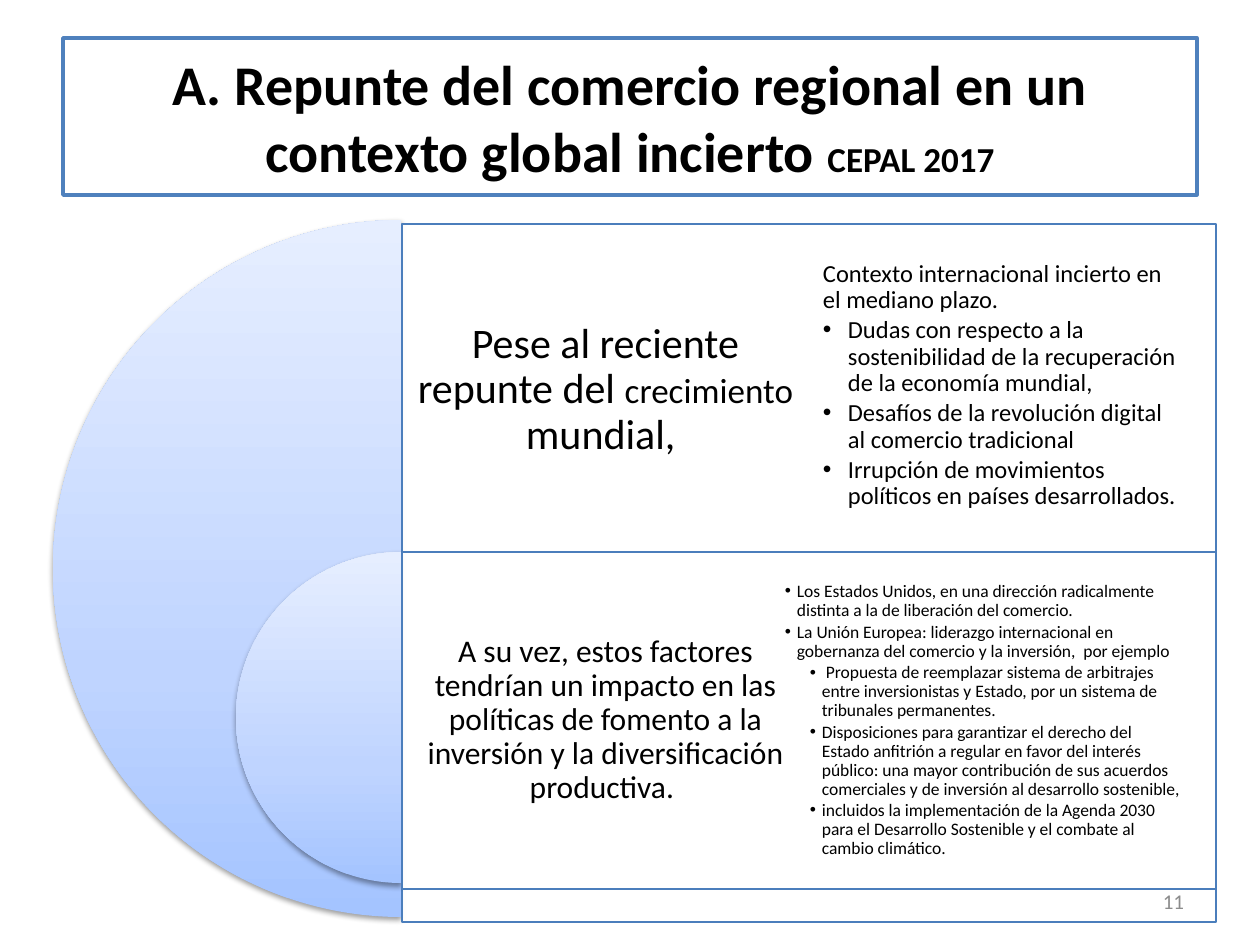
"""Build the slide on the upturn of regional trade in an uncertain global context."""
import copy

import pptx
import pptx.dml.color
import pptx.enum.shapes
import pptx.enum.text
import pptx.oxml
import pptx.oxml.ns
import pptx.util

SHAPE = pptx.enum.shapes.MSO_SHAPE
ALIGN = pptx.enum.text.PP_ALIGN
PX = 914400 / 126
BLACK = "000000"
DISC_STOPS = [(0, "A4C4FF"), (0.35, "BFD4FF"), (1, "E6EEFF")]

TITLE = [("A. Repunte del comercio regional en un contexto global incierto ", 32), ("CEPAL 2017", 20)]
PAGE_NUMBER = "11"

SECTIONS = [
    {"disc": (53, 220, 697, 697), "panel": (402, 224, 814, 698), "panel_insets": (13, 13, 420, 379),
     "heading": [("Pese al reciente repunte del ", 24), ("crecimiento", 20), (" mundial, ", 24)],
     "detail": (789, 220, 427, 331), "size": 14, "hanging": 25,
     "points": [
         (None, "Contexto internacional incierto en el mediano plazo."),
         (25, "Dudas con respecto a la sostenibilidad de la recuperación de la economía mundial,"),
         (25, "Desafíos de la revolución digital al comercio tradicional"),
         (25, "Irrupción de movimientos políticos en países desarrollados."),
     ]},
    {"disc": (236, 552, 331, 331), "panel": (402, 552, 814, 337), "panel_insets": (10, 10, 417, 10),
     "heading": [("A su vez, estos factores tendrían un impacto en las políticas de fomento "
                  "a la inversión y la diversificación productiva. ", 18)],
     "detail": (751, 544, 465, 353), "size": 10, "hanging": 12,
     "points": [
         (12, "Los Estados Unidos, en una dirección radicalmente distinta a la de liberación del comercio."),
         (12, "La Unión Europea: liderazgo internacional en gobernanza del comercio y la inversión,  por ejemplo"),
         (37, " Propuesta de reemplazar sistema de arbitrajes entre inversionistas y Estado, "
              "por un sistema de tribunales permanentes."),
         (37, "Disposiciones para garantizar el derecho del Estado anfitrión a regular en favor del "
              "interés público: una mayor contribución de sus acuerdos comerciales y de inversión "
              "al desarrollo sostenible,"),
         (37, "incluidos la implementación de la Agenda 2030 para el Desarrollo Sostenible "
              "y el combate al cambio climático."),
     ]},
]


def px(value):
    return round(value * PX)


def rgb(value):
    return pptx.dml.color.RGBColor.from_string(value)


def add_xml(parent, tag, **attributes):
    child = pptx.oxml.parse_xml(f'<a:{tag} {pptx.oxml.ns.nsdecls("a")}/>')
    for key, value in attributes.items():
        child.set(key, str(value))
    parent.append(child)
    return child


def prepare_frame(owner, insets):
    frame = owner.text_frame
    frame.word_wrap = True
    frame.vertical_anchor = pptx.enum.text.MSO_ANCHOR.MIDDLE
    frame.margin_left, frame.margin_top, frame.margin_right, frame.margin_bottom = map(px, insets)
    return frame


def write_runs(paragraph, runs, align, color=BLACK, bold=False):
    paragraph.alignment = align
    for text, size in runs:
        run = paragraph.add_run()
        run.text = text
        run.font.name = "Calibri"
        run.font.size = pptx.util.Pt(size)
        run.font.bold = bold
        run.font.color.rgb = rgb(color)


def set_spacing(paragraph, size, share):
    paragraph.line_spacing = 0.9
    paragraph.space_after = pptx.util.Pt(round(size * share, 1))


def add_box(slide, place, line_color, line_width, insets):
    box = slide.shapes.add_shape(SHAPE.RECTANGLE, *map(px, place))
    box.shadow.inherit = False
    box.fill.solid()
    box.fill.fore_color.rgb = rgb("FFFFFF")
    box.line.color.rgb = rgb(line_color)
    box.line.width = pptx.util.Pt(line_width)
    return box, prepare_frame(box, insets)


def add_disc(slide, place):
    disc = slide.shapes.add_shape(SHAPE.PIE, *map(px, place))
    disc.adjustments[0], disc.adjustments[1] = 54, 162
    disc.line.fill.background()
    disc.fill.gradient()
    disc.fill.gradient_angle = 90
    properties = disc._element.spPr
    stops = properties.find(".//" + pptx.oxml.ns.qn("a:gsLst"))
    stops.insert(1, copy.deepcopy(stops[0]))
    for stop, (position, color) in zip(disc.fill.gradient_stops, DISC_STOPS):
        stop.position = position
        stop.color.rgb = rgb(color)
    disc.shadow.inherit = False
    effects = properties.find(pptx.oxml.ns.qn("a:effectLst"))
    shadow = add_xml(effects, "outerShdw", blurRad=pptx.util.Pt(3.1), dist=pptx.util.Pt(1.6),
                     dir=5400000, rotWithShape=0)
    add_xml(add_xml(shadow, "srgbClr", val=BLACK), "alpha", val=38000)


def add_panel(slide, section):
    panel, frame = add_box(slide, section["panel"], "4B7EBC", 0.75, section["panel_insets"])
    white = panel._element.spPr.find(pptx.oxml.ns.qn("a:solidFill"))[0]
    add_xml(white, "alpha", val=90000)
    heading = section["heading"]
    write_runs(frame.paragraphs[0], heading, ALIGN.CENTER)
    set_spacing(frame.paragraphs[0], heading[0][1], 0.35)


def add_detail(slide, section):
    frame = prepare_frame(slide.shapes.add_textbox(*map(px, section["detail"])), (34,) * 4)
    for index, (indent, text) in enumerate(section["points"]):
        paragraph = frame.add_paragraph() if index else frame.paragraphs[0]
        write_runs(paragraph, [(text, section["size"])], ALIGN.LEFT)
        set_spacing(paragraph, section["size"], 0.15)
        if indent:
            properties = paragraph._p.get_or_add_pPr()
            properties.set("marL", str(px(indent)))
            properties.set("indent", str(-px(section["hanging"])))
            add_xml(properties, "buFont", typeface="Arial")
            add_xml(properties, "buChar", char="•")


def main():
    deck = pptx.Presentation()
    deck.slide_width, deck.slide_height = px(1260), px(945)
    slide = deck.slides.add_slide(deck.slide_layouts[6])

    _, title = add_box(slide, (63, 38, 1134, 157), "4F81BD", 2, (13, 6, 13, 6))
    write_runs(title.paragraphs[0], TITLE, ALIGN.CENTER, bold=True)

    for section in SECTIONS:
        add_disc(slide, section["disc"])
        add_panel(slide, section)
    for section in SECTIONS:
        add_detail(slide, section)

    number = prepare_frame(slide.shapes.add_textbox(*map(px, (903, 876, 294, 50))), (13, 6, 13, 6))
    write_runs(number.paragraphs[0], [(PAGE_NUMBER, 12)], ALIGN.RIGHT, "8C8C8C")
    deck.save("out.pptx")


if __name__ == "__main__":
    main()
